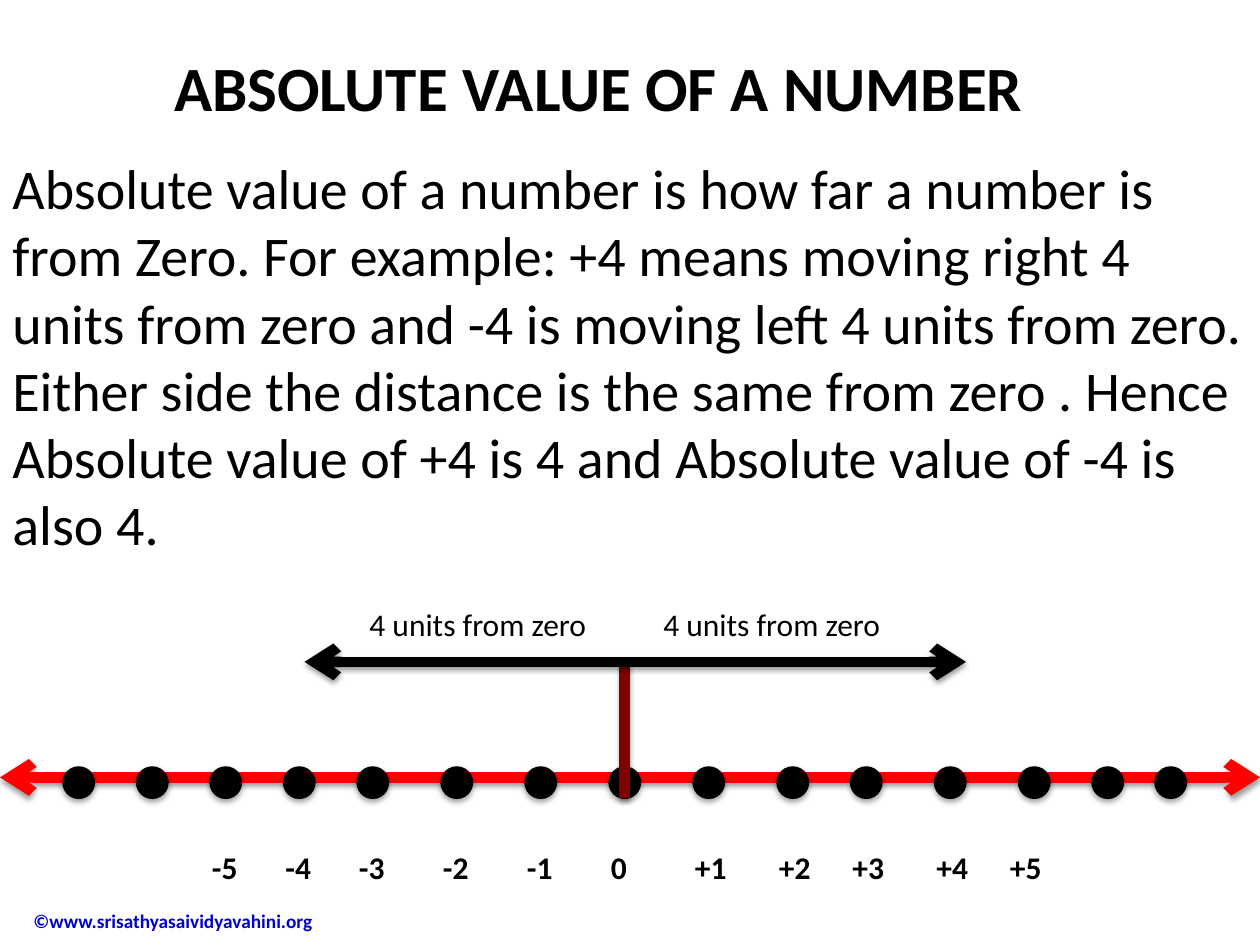
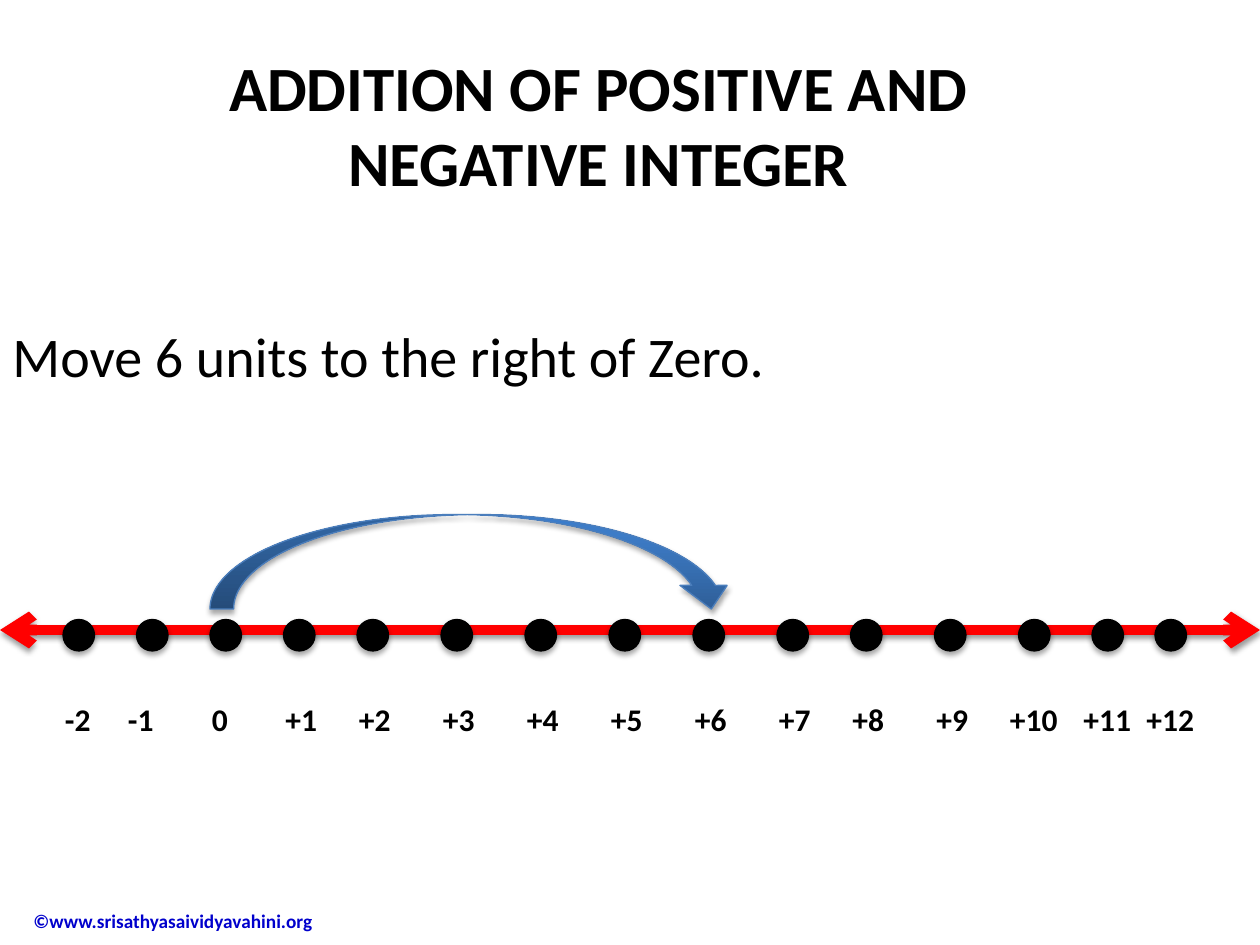
import copy
import itertools

import pptx
import pptx.dml.color
import pptx.enum.dml
import pptx.enum.shapes
import pptx.enum.text
import pptx.oxml
import pptx.oxml.ns
import pptx.util

Inches, Pt = pptx.util.Inches, pptx.util.Pt
RGBColor = pptx.dml.color.RGBColor
Shape = pptx.enum.shapes.MSO_SHAPE
Anchor = pptx.enum.text.MSO_ANCHOR
Align = pptx.enum.text.PP_ALIGN
AutoSize = pptx.enum.text.MSO_AUTO_SIZE
qn = pptx.oxml.ns.qn

# Content
FOOTER = "©www.srisathyasaividyavahini.org"
SLIDES = [
    {
        "title": "ABSOLUTE VALUE OF A NUMBER",
        "body": "Absolute value of a number is how far a number is from Zero. "
                "For example: +4 means moving right 4 units from zero and -4 is "
                "moving left 4 units from zero. Either side\u00a0the distance is the "
                "same from zero . Hence Absolute value of +4 is 4 and Absolute "
                "value of -4 is also 4.",
        "body_top": 1.17, "body_height": 3,
        "axis": 6.17, "first_dot": 2, "numbers": range(-5, 6),
        "nudged": {5},
    },
    {
        "title": "ADDITION OF POSITIVE AND\vNEGATIVE INTEGER",
        "body": "Move 6 units to the right of Zero.",
        "body_top": 2.5, "body_height": 0.92,
        "axis": 5, "first_dot": 0, "numbers": range(-2, 13),
        "nudged": {-1, 10, 11, 12},
    },
]
DISTANCE = "4 units from zero"

# Style and grid: one unit is a twelfth of an inch
FONT = "Calibri"
BLACK = RGBColor(0x00, 0x00, 0x00)
RED = RGBColor(0xFF, 0x00, 0x00)
MAROON = RGBColor(0x80, 0x00, 0x00)
FOOTER_BLUE = RGBColor(0x00, 0x00, 0xCC)
ARC_EDGE = RGBColor(0x4B, 0x7E, 0xBC)
ARC_STOPS = [(0, RGBColor(0x2F, 0x5F, 0x99)), (0.8, RGBColor(0x3D, 0x7C, 0xC7)),
             (1, RGBColor(0x3A, 0x7C, 0xCB))]
WIDTH, HEIGHT = 10, 7.5
UNIT = 1 / 12
DOT = 3 * UNIT
DOT_STEPS = [6, 7, 7, 7, 7, 8, 8, 8, 8, 8, 7, 8, 8, 7, 6]
DOT_LEFTS = [step * UNIT for step in itertools.accumulate(DOT_STEPS)]


def write(frame, text, size=18, bold=False, color=BLACK, align=Align.LEFT,
          anchor=Anchor.TOP, wrap=True, grow=False):
    frame.text = text
    frame.word_wrap = wrap
    frame.auto_size = AutoSize.SHAPE_TO_FIT_TEXT if grow else AutoSize.NONE
    frame.vertical_anchor = anchor
    para = frame.paragraphs[0]
    para.alignment = align
    for span in para.runs:
        span.font.name, span.font.size = FONT, Pt(size)
        span.font.bold, span.font.color.rgb = bold, color


def add_text(page, text, left, top, width, height, **style):
    box = page.shapes.add_textbox(*map(Inches, (left, top, width, height)))
    write(box.text_frame, text, **style)
    return box


def cast_shadow(shape, distance=1.8, opacity=35):
    shape.element.spPr.append(pptx.oxml.parse_xml(
        f'<a:effectLst {pptx.oxml.ns.nsdecls("a")}>'
        f'<a:outerShdw blurRad="{Pt(3.1)}" dist="{Pt(distance)}" dir="5400000" '
        f'rotWithShape="0"><a:srgbClr val="000000">'
        f'<a:alpha val="{opacity * 1000}"/></a:srgbClr></a:outerShdw></a:effectLst>'))


def add_line(page, start, end, color, arrows=False):
    line = page.shapes.add_connector(pptx.enum.shapes.MSO_CONNECTOR.STRAIGHT,
                                     *map(Inches, start + end))
    line.line.color.rgb = color
    line.line.width = Pt(6)
    if arrows:
        stroke = line.element.spPr.find(qn("a:ln"))
        for tag in ("a:headEnd", "a:tailEnd"):
            stroke.append(stroke.makeelement(qn(tag), {"type": "arrow"}))
    cast_shadow(line, distance=1.6, opacity=38)


def add_number_line(page, axis, first_dot, numbers, nudged):
    add_line(page, (0, axis), (WIDTH, axis), RED, arrows=True)
    for left in DOT_LEFTS:
        dot = page.shapes.add_shape(
            Shape.OVAL, *map(Inches, (left, axis - UNIT, DOT, DOT)))
        dot.fill.solid()
        dot.fill.fore_color.rgb = dot.line.color.rgb = BLACK
        dot.line.width = Pt(0.75)
        cast_shadow(dot)
    for number, left in zip(numbers, DOT_LEFTS[first_dot:]):
        label = f"{number:+d}" if number else "0"
        shift = 2 * UNIT if number in nudged else UNIT
        width = 0.2 + 0.13 * len(label) - (0.05 if number < 0 else 0)
        add_text(page, label, left - shift, axis + 0.51, width, 0.4,
                 bold=True, wrap=False, grow=True)


def add_distances(page, axis):
    zero, level = DOT_LEFTS[7] + DOT / 2, axis - 11 * UNIT
    add_line(page, (zero, axis + 2 * UNIT), (zero, level), MAROON)
    add_line(page, (29 * UNIT, level), (92 * UNIT, level), BLACK, arrows=True)
    for left in (34 * UNIT, 62 * UNIT):
        add_text(page, DISTANCE, left, level - 0.5, 1.95, 0.4, wrap=False, grow=True)


def add_jump(page, axis):
    start, end = DOT_LEFTS[2], DOT_LEFTS[8] + 4 * UNIT
    jump = page.shapes.add_shape(
        Shape.CURVED_DOWN_ARROW,
        *map(Inches, (start, axis - 11 * UNIT, end - start, 0.75)))
    jump.fill.gradient()
    jump.fill.gradient_angle = 90
    stops = jump.element.spPr.find(".//" + qn("a:gsLst"))
    stops.insert(1, copy.deepcopy(stops[0]))
    for stop, (position, color) in zip(jump.fill.gradient_stops, ARC_STOPS):
        stop.position, stop.color.rgb = position, color
    jump.line.color.rgb = ARC_EDGE
    jump.line.width = Pt(0.75)
    cast_shadow(jump)


def add_page(deck, content):
    page = deck.slides.add_slide(deck.slide_layouts[5])
    title = page.shapes.title
    title.left, title.top, title.width, title.height = map(
        Inches, (7 * UNIT, 4 * UNIT, 100 * UNIT, 15 * UNIT))
    write(title.text_frame, content["title"], size=36, bold=True, align=Align.CENTER)
    add_text(page, content["body"], 0, content["body_top"], WIDTH - 0.01,
             content["body_height"], size=32)
    add_number_line(page, content["axis"], content["first_dot"],
                    content["numbers"], content["nudged"])
    return page


def main():
    deck = pptx.Presentation()
    deck.slide_width, deck.slide_height = Inches(WIDTH), Inches(HEIGHT)
    pages = [add_page(deck, content) for content in SLIDES]
    add_distances(pages[0], SLIDES[0]["axis"])
    add_jump(pages[1], SLIDES[1]["axis"])

    # The footer sits on the shared layout
    footer = add_text(pages[0], FOOTER, 2 * UNIT, 7.1, 2.52, 0.41, size=11, bold=True,
                      color=FOOTER_BLUE, anchor=Anchor.MIDDLE, wrap=False)
    deck.slide_layouts[5].shapes.element.append(footer.element)
    deck.save("out.pptx")


if __name__ == "__main__":
    main()
